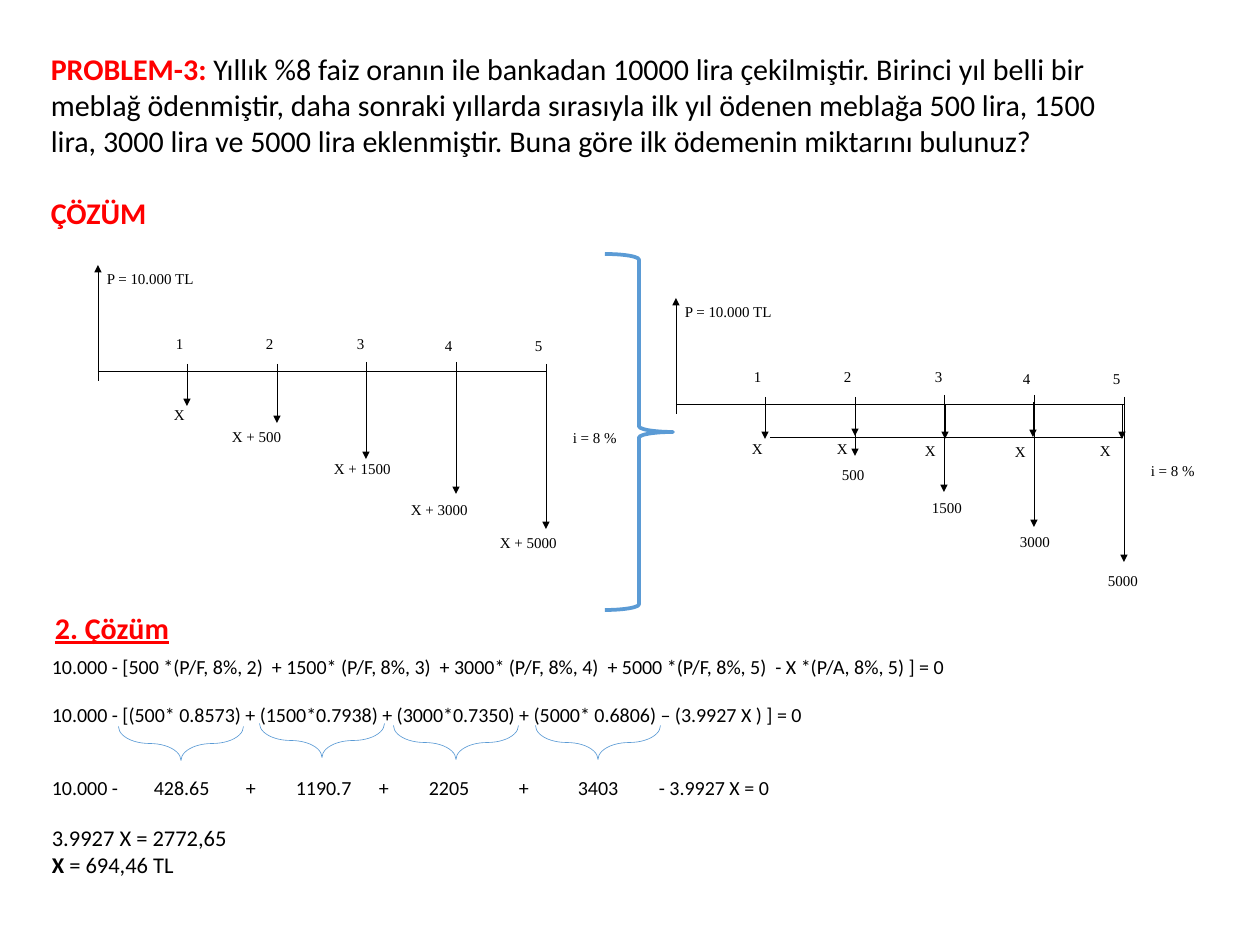
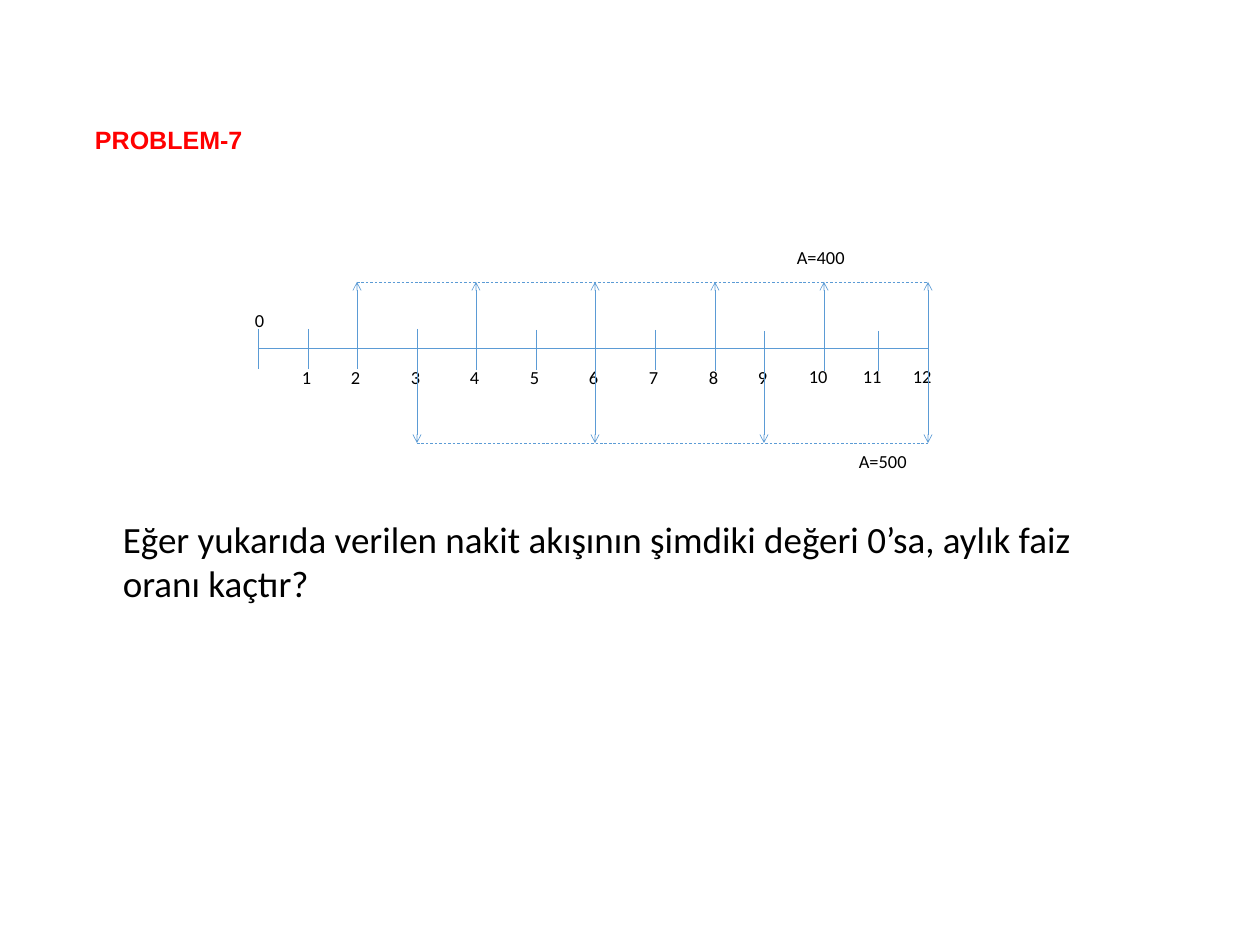
from dataclasses import dataclass

from lxml.etree import SubElement
from pptx import Presentation
from pptx.dml.color import RGBColor
from pptx.enum.dml import MSO_LINE
from pptx.enum.shapes import MSO_CONNECTOR, MSO_SHAPE
from pptx.enum.text import MSO_ANCHOR, PP_ALIGN
from pptx.oxml.ns import qn
from pptx.util import Pt

PX = 10160


@dataclass(frozen=True)
class Theme:
    """Colours, fonts and type sizes shared by the slides."""

    ink: str = "000000"
    accent: str = "FF0000"
    blue: str = "5B9BD5"
    body_font: str = "Calibri"
    title_font: str = "Arial"
    diagram_font: str = "Times New Roman"
    question: float = 29.6
    heading: float = 24
    title: float = 20
    result: float = 18
    equation: float = 16
    month: float = 14.7
    label: float = 12
    thin: float = 0.5
    axis: float = 0.75
    thick: float = 3


@dataclass
class Line:
    """One paragraph: a string, or (text, colour, bold) runs."""

    content: object
    size: float
    before: float = 0
    color: str = Theme.ink
    bold: bool = False
    underline: bool = False
    font: str = Theme.body_font
    tabs: tuple = ()


class Deck:
    """Holds the theme, the presentation and the current slide."""

    TITLE_ONLY, BLANK = 5, 6

    def __init__(self, theme, width, height):
        """Start a presentation of the given size in px."""
        self.theme = theme
        self.presentation = Presentation()
        self.presentation.slide_width = width * PX
        self.presentation.slide_height = height * PX
        self.slide = None

    def new_slide(self, layout):
        """Add a slide and make it current."""
        layouts = self.presentation.slide_layouts
        self.slide = self.presentation.slides.add_slide(layouts[layout])

    def title(self, text, left, top, width, height):
        """Place and format the title placeholder."""
        shape = self.slide.shapes.title
        shape.left, shape.top = left * PX, top * PX
        shape.width, shape.height = width * PX, height * PX
        shape.text_frame.vertical_anchor = MSO_ANCHOR.MIDDLE
        paragraph = shape.text_frame.paragraphs[0]
        paragraph.alignment = PP_ALIGN.LEFT
        paragraph.line_spacing = 0.9
        self.fill_paragraph(paragraph, Line(text, self.theme.title, color=self.theme.accent,
                                            bold=True, font=self.theme.title_font))

    def fill_paragraph(self, paragraph, line):
        """Fill a paragraph from a Line."""
        if line.before:
            paragraph.space_before = Pt(line.before)
        if line.tabs:
            properties = paragraph._p.get_or_add_pPr()
            stops = SubElement(properties, qn("a:tabLst"))
            for stop in line.tabs:
                SubElement(stops, qn("a:tab"), pos=str(stop * PX), algn="l")
        font = paragraph.font
        font.name, font.size = line.font, Pt(line.size)
        if isinstance(line.content, str):
            paragraph.add_run().text = line.content
            font.bold, font.underline = line.bold, line.underline
            font.color.rgb = RGBColor.from_string(line.color)
            return
        for text, color, bold in line.content:
            run = paragraph.add_run()
            run.text = text
            run.font.bold = bold
            run.font.color.rgb = RGBColor.from_string(color)

    def text(self, left, top, width, height, *lines):
        """Add a wrapping text box."""
        shape = self.slide.shapes.add_textbox(left * PX, top * PX, width * PX, height * PX)
        frame = shape.text_frame
        frame.word_wrap = True
        for index, line in enumerate(lines):
            paragraph = frame.add_paragraph() if index else frame.paragraphs[0]
            self.fill_paragraph(paragraph, line)

    def label(self, text, left, top, width):
        """Add a cash flow label."""
        self.text(left, top, width, 46,
                  Line(text, self.theme.label, font=self.theme.diagram_font))

    def month_label(self, text, left, top, width):
        """Add a label of the monthly time line."""
        self.text(left, top, width, 32, Line(text, self.theme.month))

    def line(self, x1, y1, x2, y2, color=Theme.ink, weight=Theme.axis, head=None, dash=False):
        """Add a straight line with an optional arrowhead at its end."""
        connector = self.slide.shapes.add_connector(
            MSO_CONNECTOR.STRAIGHT, x1 * PX, y1 * PX, x2 * PX, y2 * PX)
        connector.line.color.rgb = RGBColor.from_string(color)
        connector.line.width = Pt(weight)
        if dash:
            connector.line.dash_style = MSO_LINE.DASH
        properties = connector._element.spPr
        if head:
            SubElement(properties.find(qn("a:ln")), qn("a:tailEnd"), type=head)
        SubElement(properties, qn("a:effectLst"))

    def blue_line(self, x1, y1, x2, y2, head=None, dash=False):
        """Add a thin line of the monthly time line."""
        self.line(x1, y1, x2, y2, self.theme.blue, self.theme.thin, head, dash)

    def brace(self, kind, left, top, width, height, weight, rotation=0, curve=None):
        """Add an unfilled brace."""
        shape = self.slide.shapes.add_shape(kind, left * PX, top * PX, width * PX, height * PX)
        shape.shadow.inherit = False
        shape.fill.background()
        shape.line.color.rgb = RGBColor.from_string(self.theme.blue)
        shape.line.width = Pt(weight)
        shape.rotation = rotation
        if curve:
            shape.adjustments[0] = curve

    def cash_flow(self, left, axis, amounts):
        """Draw a five-year cash flow with its origin at left, axis."""
        self.line(left, axis, left + 448, axis)
        self.line(left, axis - 7, left, axis + 10)
        self.line(left, axis, left, axis - 106, head="triangle")
        self.label("P = 10.000 TL", left, axis - 106, 197)
        years = ((-20, -41, -7, 35), (-20, -41, -7, 52), (-18, -41, -9, 88),
                 (-20, -39, -9, 123), (-20, -39, -7, 158))
        for year, (shift, rise, tick, length) in enumerate(years, 1):
            x = left + 448 * year // 5
            self.line(x, axis + tick, x, axis + tick + 17)
            self.line(x, axis, x, axis + length, head="triangle")
            self.label(str(year), x + shift, axis + rise, 37)
        for text, x, y, width in amounts:
            self.label(text, x, y, width)
        self.label("i = 8 %", left + 466, axis + 53, 143)


def build_problem_3(deck):
    """Loan problem with two cash flows and the worked solution."""
    theme = deck.theme
    deck.new_slide(Deck.BLANK)
    question = (
        "Yıllık %8 faiz oranın ile bankadan 10000 lira çekilmiştir. Birinci yıl belli bir "
        "meblağ ödenmiştir, daha sonraki yıllarda sırasıyla ilk yıl ödenen meblağa 500 lira, "
        "1500 lira, 3000 lira ve 5000 lira eklenmiştir. Buna göre ilk ödemenin miktarını bulunuz?")
    deck.text(42, 46, 1100, 191,
              Line([("PROBLEM-3: ", theme.accent, True), (question, theme.ink, False)],
                   theme.heading),
              Line("ÇÖZÜM", theme.heading, before=29, color=theme.accent, bold=True))

    deck.cash_flow(676, 404, [
        ("X", 743, 435, 54), ("500", 833, 461, 77), ("1500", 923, 494, 120),
        ("3000", 1011, 528, 120), ("5000", 1099, 567, 120)])
    deck.text(43, 650, 1190, 266,
              Line("10.000 - [500 *(P/F, 8%, 2)  + 1500* (P/F, 8%, 3)  + 3000* (P/F, 8%, 4)  "
                   "+ 5000 *(P/F, 8%, 5)  - X *(P/A, 8%, 5) ] = 0", theme.equation),
              Line("10.000 - [(500* 0.8573) + (1500*0.7938) + (3000*0.7350) + (5000* 0.6806) "
                   "– (3.9927 X ) ] = 0", theme.equation, before=19.5),
              Line("10.000 -\t428.65\t+\t1190.7\t+\t2205\t+\t3403\t- 3.9927 X = 0",
                   theme.equation, before=39, tabs=(102, 194, 244, 327, 377, 467, 526, 607)),
              Line("3.9927 X = 2772,65", theme.result, before=19.5),
              Line([("X ", theme.ink, True), ("= 694,46 TL", theme.ink, False)], theme.result))
    deck.text(46, 605, 1100, 45,
              Line("2. Çözüm", theme.heading, color=theme.accent, bold=True, underline=True))
    deck.cash_flow(98, 371, [
        ("X", 165, 401, 54), ("X + 500", 223, 423, 120), ("X + 1500", 325, 455, 120),
        ("X + 3000", 402, 496, 120), ("X + 5000", 491, 529, 120)])

    deck.line(770, 437, 1123, 437, weight=theme.thin)
    equal_payments = ((855, 401, 828, 435), (945, 404, 916, 437),
                      (1033, 402, 1006, 438), (1122, 404, 1091, 437))
    for x, top, label_left, label_top in equal_payments:
        deck.line(x, top, x, top + 35, head="triangle")
        deck.label("X", label_left, label_top, 54)
    for left, top in ((164, 681), (305, 678), (439, 680), (581, 680)):
        deck.brace(MSO_SHAPE.LEFT_BRACE, left, top, 34, 125, theme.thin, 270, 0.94)
    deck.brace(MSO_SHAPE.RIGHT_BRACE, 605, 254, 68, 356, theme.thick)


def build_problem_7(deck):
    """Monthly cash flow with an unknown interest rate."""
    deck.new_slide(Deck.TITLE_ONLY)
    deck.title("PROBLEM-7", 86, 50, 1086, 183)
    months = (258, 308, 357, 417, 476, 536, 595, 655, 715, 764, 824, 878, 928)
    axis, income, expense = 348, 282, 443
    deck.blue_line(months[0], axis, months[-1], axis)
    for month, x in enumerate(months):
        tick = 329 + month // 4
        deck.blue_line(x, tick, x, tick + 40)
        if month == 0:
            deck.month_label("0", x - 12, 305, 30)
        elif month < 10:
            deck.month_label(str(month), x - 15, 362, 30)
        else:
            deck.month_label(str(month), x - 24, 361, 50)
    for first, step, level in ((2, 2, income), (3, 3, expense)):
        deck.blue_line(months[first], level, months[-1], level, dash=True)
        for x in months[first::step]:
            deck.blue_line(x, axis, x, level, head="arrow")
    deck.month_label("A=400", 788, 242, 89)
    deck.month_label("A=500", 850, 446, 89)
    deck.text(114, 512, 1003, 99,
              Line("Eğer yukarıda verilen nakit akışının şimdiki değeri 0’sa, aylık faiz "
                   "oranı kaçtır?", deck.theme.question))


def main():
    """Build both slides and save them."""
    deck = Deck(Theme(), 1260, 945)
    build_problem_3(deck)
    build_problem_7(deck)
    deck.presentation.save("out.pptx")


if __name__ == "__main__":
    main()
